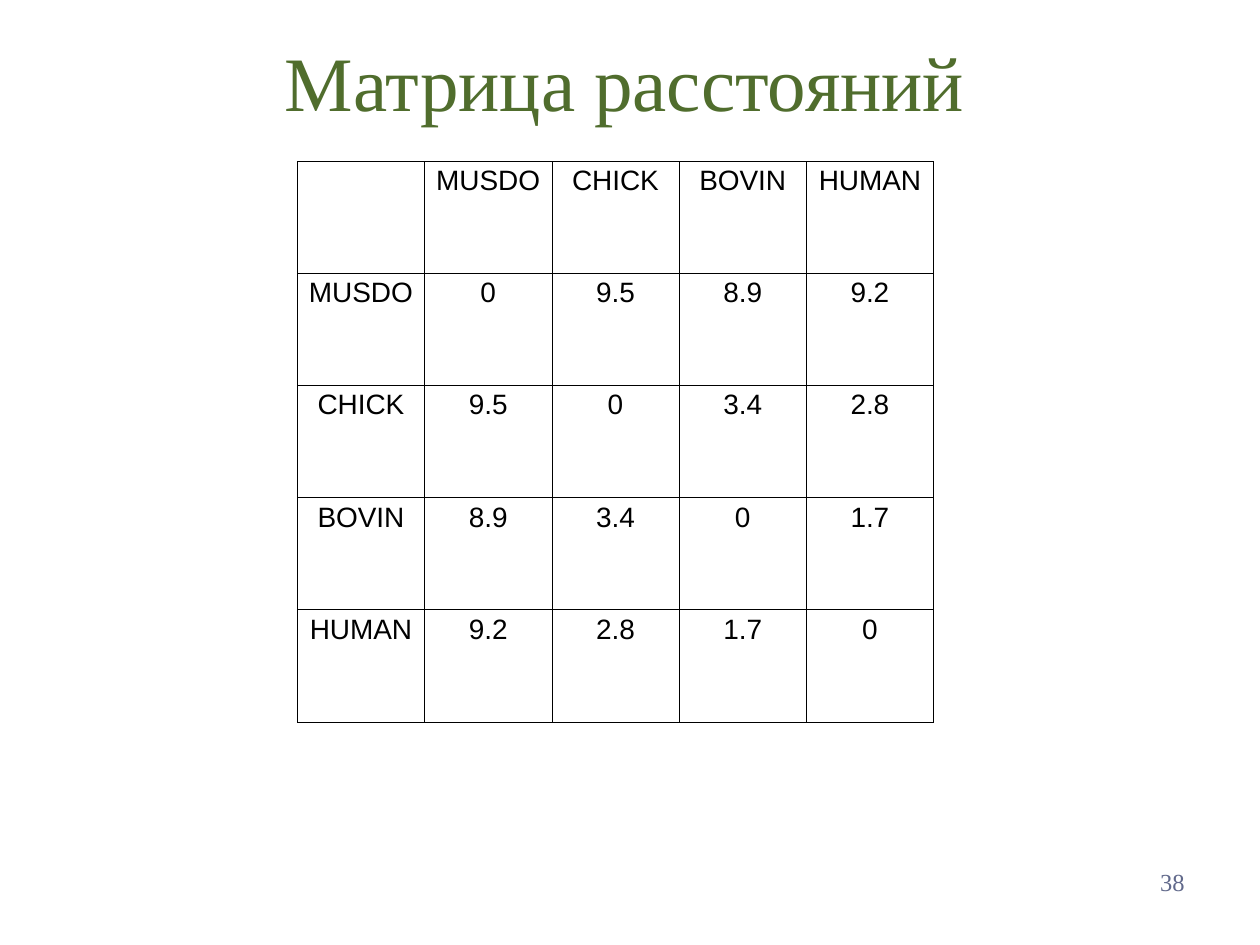
"""Build a slide with a symmetric matrix of distances between four species."""
from lxml.etree import SubElement
from pptx import Presentation
from pptx.dml.color import RGBColor as RGB
from pptx.enum.text import MSO_ANCHOR as ANCHOR, PP_ALIGN as ALIGN
from pptx.oxml.ns import qn
from pptx.util import Inches, Pt

COLORS = {"title": "506D2D", "number": "61698B", "ink": "000000", "paper": "FFFFFF"}
SPECIES = ["MUSDO", "CHICK", "BOVIN", "HUMAN"]
DISTANCES = [
    ["0", "9.5", "8.9", "9.2"],
    ["9.5", "0", "3.4", "2.8"],
    ["8.9", "3.4", "0", "1.7"],
    ["9.2", "2.8", "1.7", "0"],
]
COL_W, ROW_H = Inches(1.01), Inches(0.89)


def set_text(p, text, size, font, color, align):
    p.text = text
    p.alignment = align
    p.font.size = Pt(size)
    p.font.name = font
    p.font.color.rgb = RGB.from_string(COLORS[color])


def set_borders(cell, width, color):
    tc_pr = cell._tc.get_or_add_tcPr()
    for side in ("lnL", "lnR", "lnT", "lnB"):
        ln = SubElement(tc_pr, qn(f"a:{side}"), w=str(Pt(width)))
        fill = SubElement(ln, qn("a:solidFill"))
        SubElement(fill, qn("a:srgbClr"), val=COLORS[color])


prs = Presentation()
prs.slide_width, prs.slide_height = Inches(10), Inches(7.5)
s = prs.slides.add_slide(prs.slide_layouts[6])
s.background.fill.solid()
s.background.fill.fore_color.rgb = RGB.from_string(COLORS["paper"])

labels = [
    ("Матрица расстояний", (0.46, 0.06, 9, 1.16), 44, "title", ALIGN.CENTER, ANCHOR.MIDDLE),
    ("38", (7.17, 6.83, 2.33, 0.51), 14, "number", ALIGN.RIGHT, ANCHOR.TOP),
]
for text, box, size, color, align, anchor in labels:
    tf = s.shapes.add_textbox(*map(Inches, box)).text_frame
    tf.word_wrap = True
    tf.vertical_anchor = anchor
    set_text(tf.paragraphs[0], text, size, "Times New Roman", color, align)

rows = [["", *SPECIES]] + [[name, *row] for name, row in zip(SPECIES, DISTANCES)]
n = len(rows)
table = s.shapes.add_table(n, n, Inches(2.36), Inches(1.28), n * COL_W, n * ROW_H).table
table.first_row = table.horz_banding = False
for i, row in enumerate(rows):
    table.rows[i].height = ROW_H
    table.columns[i].width = COL_W
    for j, text in enumerate(row):
        cell = table.cell(i, j)
        cell.margin_left = cell.margin_right = Inches(0.04)
        set_borders(cell, 0.28, "ink")
        cell.fill.background()
        p = cell.text_frame.paragraphs[0]
        set_text(p, text, 16, "Arial", "ink", ALIGN.CENTER)
        p.line_spacing = 0.93

prs.save("out.pptx")
